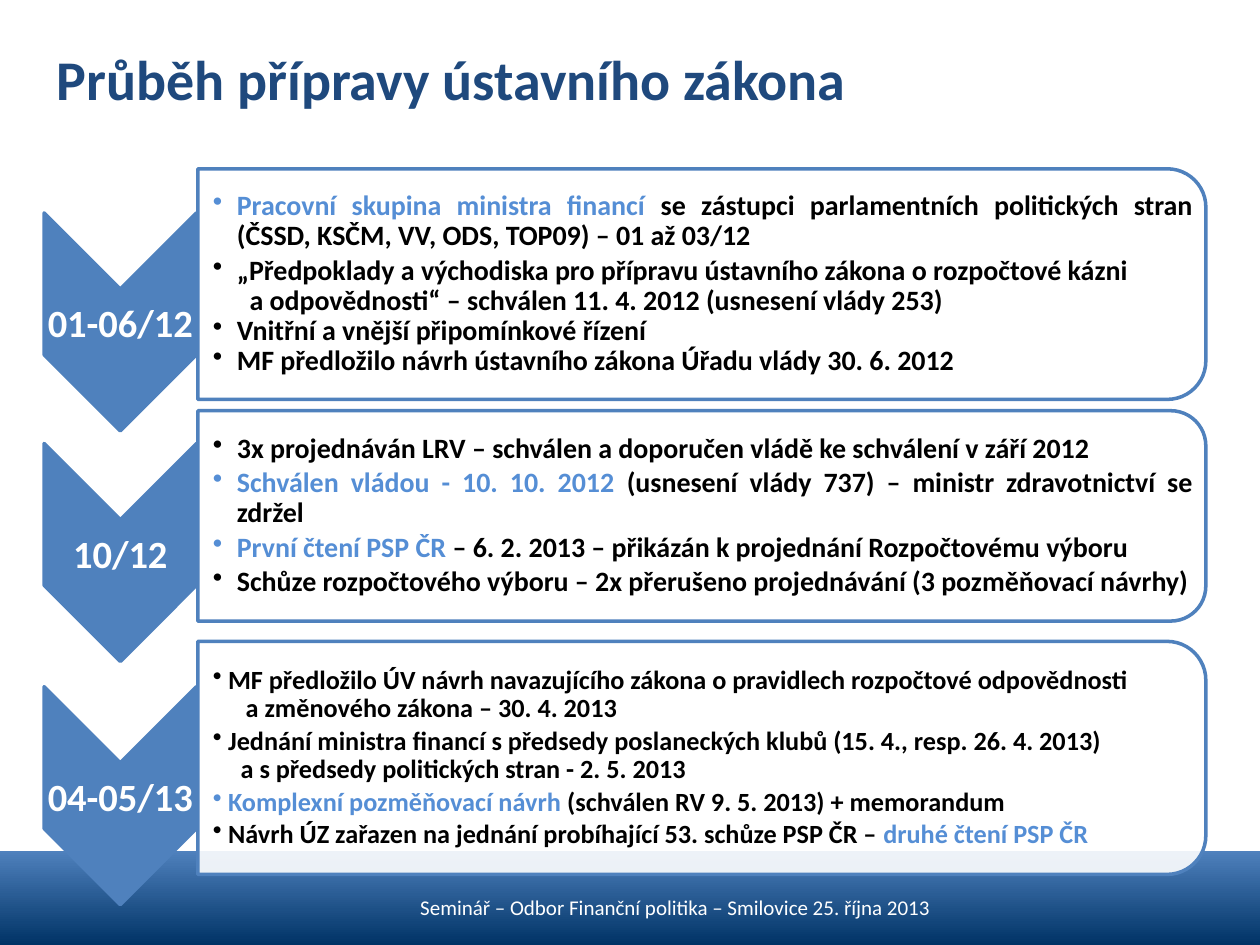
from dataclasses import dataclass

from lxml import etree
from pptx import Presentation
from pptx.dml.color import RGBColor
from pptx.enum.shapes import MSO_SHAPE
from pptx.enum.text import MSO_ANCHOR, PP_ALIGN
from pptx.oxml.ns import qn
from pptx.util import Inches, Pt

CHEVRON = MSO_SHAPE.CHEVRON
PANEL = MSO_SHAPE.ROUND_2_SAME_RECTANGLE
TOP, MIDDLE = MSO_ANCHOR.TOP, MSO_ANCHOR.MIDDLE
LEFT, CENTER, JUSTIFY = PP_ALIGN.LEFT, PP_ALIGN.CENTER, PP_ALIGN.JUSTIFY


@dataclass(frozen=True)
class Theme:
    font: str = "Calibri"
    navy: str = "003366"
    blue: str = "4F81BD"
    white: str = "FFFFFF"
    black: str = "000000"
    title: str = "1F497D"
    accent: str = "558ED5"
    title_size: int = 32
    date_size: int = 22
    footer_size: int = 12
    line_width: int = 2


@dataclass(frozen=True)
class Item:
    runs: tuple  # (text, is highlighted) pairs
    continuation: str = ""  # second line, set in by `offset` inches
    offset: float = 0.1
    gap: float = 2.4  # points after the item


@dataclass(frozen=True)
class Phase:
    date: str
    chevron_top: float
    panel_top: float
    panel_height: float
    size: int
    indent: float
    items: tuple


class SlideBuilder:
    def __init__(self, slide, theme):
        self.slide, self.theme = slide, theme

    def background(self):
        """Dark band along the bottom tenth, white above."""
        t = self.theme
        fill = self.slide.background.fill
        fill.gradient()
        fill.gradient_angle = 90
        stops = next(self.slide.element.iter(qn("a:gsLst")))
        for stop in list(stops):
            stops.remove(stop)
        for percent, color in ((0, t.navy), (10, t.blue), (10, t.white)):
            stop = etree.SubElement(stops, qn("a:gs"), pos=str(percent * 1000))
            etree.SubElement(stop, qn("a:srgbClr"), val=color)

    def run(self, paragraph, text, size, color, bold=True):
        run = paragraph.add_run()
        run.text = text
        font = run.font
        font.name, font.size, font.bold = self.theme.font, Pt(size), bold
        font.color.rgb = RGBColor.from_string(color)

    def title(self, text, left, top, width, height):
        title = self.slide.shapes.title
        title.left, title.top = Inches(left), Inches(top)
        title.width, title.height = Inches(width), Inches(height)
        title.text_frame.vertical_anchor = TOP
        paragraph = title.text_frame.paragraphs[0]
        paragraph.alignment = LEFT
        self.run(paragraph, text, self.theme.title_size, self.theme.title)

    def turned_shape(self, kind, left, top, width, height, color, opacity=100):
        """Shape turned 90 degrees that fills the given box on the slide."""
        shift = (width - height) / 2
        shape = self.slide.shapes.add_shape(
            kind, Inches(left + shift), Inches(top - shift),
            Inches(height), Inches(width))
        shape.rotation = 90
        shape.shadow.inherit = False
        shape.fill.solid()
        shape.fill.fore_color.rgb = RGBColor.from_string(color)
        if opacity < 100:
            fill_color = shape.fill._xPr.find(qn("a:solidFill"))[0]
            etree.SubElement(fill_color, qn("a:alpha"), val=str(opacity * 1000))
        shape.line.color.rgb = RGBColor.from_string(self.theme.blue)
        shape.line.width = Pt(self.theme.line_width)

    def text_frame(self, left, top, width, height, insets, anchor=MIDDLE):
        box = self.slide.shapes.add_textbox(
            Inches(left), Inches(top), Inches(width), Inches(height))
        frame = box.text_frame
        frame.word_wrap = True
        frame.vertical_anchor = anchor
        frame.margin_left, frame.margin_top, frame.margin_right, \
            frame.margin_bottom = map(Inches, insets)
        return frame

    def label(self, text, left, top, width, height, size, inset, bold=True):
        frame = self.text_frame(left, top, width, height, inset)
        paragraph = frame.paragraphs[0]
        paragraph.alignment = CENTER
        self.run(paragraph, text, size, self.theme.white, bold)

    def item_paragraph(self, frame, indent, gap, bullet=True):
        first = not frame.paragraphs[0].runs
        paragraph = frame.paragraphs[0] if first else frame.add_paragraph()
        props = paragraph._p.get_or_add_pPr()
        props.set("marL", str(Inches(indent)))
        props.set("indent", str(-Inches(indent) if bullet else 0))
        if bullet:
            etree.SubElement(props, qn("a:buChar"), char="•")
        else:
            etree.SubElement(props, qn("a:buNone"))
        paragraph.alignment = JUSTIFY
        paragraph.line_spacing = 0.9
        paragraph.space_after = Pt(gap)
        return paragraph

    def bullets(self, phase, left, top, width, height):
        t = self.theme
        frame = self.text_frame(left, top, width, height, (0.12, 0.01, 0.01, 0.01))
        for item in phase.items:
            gap = 0 if item.continuation else item.gap
            paragraph = self.item_paragraph(frame, phase.indent, gap)
            for text, highlighted in item.runs:
                self.run(paragraph, text, phase.size,
                         t.accent if highlighted else t.black)
            if item.continuation:
                paragraph = self.item_paragraph(
                    frame, phase.indent + item.offset, item.gap, bullet=False)
                self.run(paragraph, item.continuation, phase.size, t.black)

    def phase(self, phase):
        t = self.theme
        chevron_left, chevron_width, panel_width = 0.35, 1.21, 8
        panel_left = chevron_left + chevron_width + 0.01
        # Date marker
        self.turned_shape(CHEVRON, chevron_left, phase.chevron_top,
                          chevron_width, 1.73, t.blue)
        self.label(phase.date, chevron_left, phase.chevron_top + 0.61,
                   chevron_width, 0.52, t.date_size, (0.02,) * 4)
        # Panel with the steps
        self.turned_shape(PANEL, panel_left, phase.panel_top, panel_width,
                          phase.panel_height, t.white, opacity=90)
        self.bullets(phase, panel_left, phase.panel_top + 0.09,
                     panel_width - 0.09, phase.panel_height - 0.18)


PHASES = (
    Phase("01-06/12", 1.69, 1.34, 1.83, 16, 0.19, (
        Item((("Pracovní skupina ministra financí ", True),
              ("se zástupci parlamentních politických stran "
               "(ČSSD, KSČM, VV, ODS, TOP09) – 01 až 03/12", False))),
        Item((("„Předpoklady a východiska pro přípravu ústavního zákona "
               "o rozpočtové kázni", False),),
             "a odpovědnosti“ – schválen 11. 4. 2012 (usnesení vlády 253)",
             gap=0),
        Item((("Vnitřní a vnější připomínkové řízení", False),), gap=0),
        Item((("MF předložilo návrh ústavního zákona Úřadu vlády 30. 6. 2012",
               False),)))),
    Phase("10/12", 3.52, 3.26, 1.67, 16, 0.19, (
        Item((("3x projednáván LRV – schválen a doporučen vládě "
               "ke schválení v září 2012", False),)),
        Item((("Schválen vládou - 10. 10. 2012 ", True),
              ("(usnesení vlády 737) – ministr zdravotnictví se zdržel", False))),
        Item((("První čtení PSP ČR ", True),
              ("– 6. 2. 2013 – přikázán k projednání Rozpočtovému výboru",
               False))),
        Item((("Schůze rozpočtového výboru – 2x přerušeno projednávání "
               "(3 pozměňovací návrhy)", False),)))),
    Phase("04-05/13", 5.45, 5.09, 1.85, 15, 0.12, (
        Item((("MF předložilo ÚV návrh navazujícího zákona o pravidlech "
               "rozpočtové odpovědnosti", False),),
             "a změnového zákona – 30. 4. 2013", offset=0.14),
        Item((("Jednání ministra financí s předsedy poslaneckých klubů "
               "(15. 4., resp. 26. 4. 2013)", False),),
             "a s předsedy politických stran - 2. 5. 2013"),
        Item((("Komplexní pozměňovací návrh ", True),
              ("(schválen RV 9. 5. 2013) + memorandum", False))),
        Item((("Návrh ÚZ zařazen na jednání probíhající 53. schůze PSP ČR – ",
               False), ("druhé čtení PSP ČR", True))))),
)


def main():
    deck = Presentation()
    deck.slide_width, deck.slide_height = Inches(10), Inches(7.5)
    theme = Theme()
    builder = SlideBuilder(deck.slides.add_slide(deck.slide_layouts[5]), theme)
    builder.background()
    builder.title("Průběh přípravy ústavního zákona", 0.35, 0.3, 9.21, 1.01)
    for phase in PHASES:
        builder.phase(phase)
    # Footer
    builder.label("Seminář – Odbor Finanční politika – Smilovice 25. října 2013",
                  1.54, 7.05, 7.64, 0.3, theme.footer_size,
                  (0.1, 0.05, 0.1, 0.05), bold=False)
    deck.save("out.pptx")


if __name__ == "__main__":
    main()
